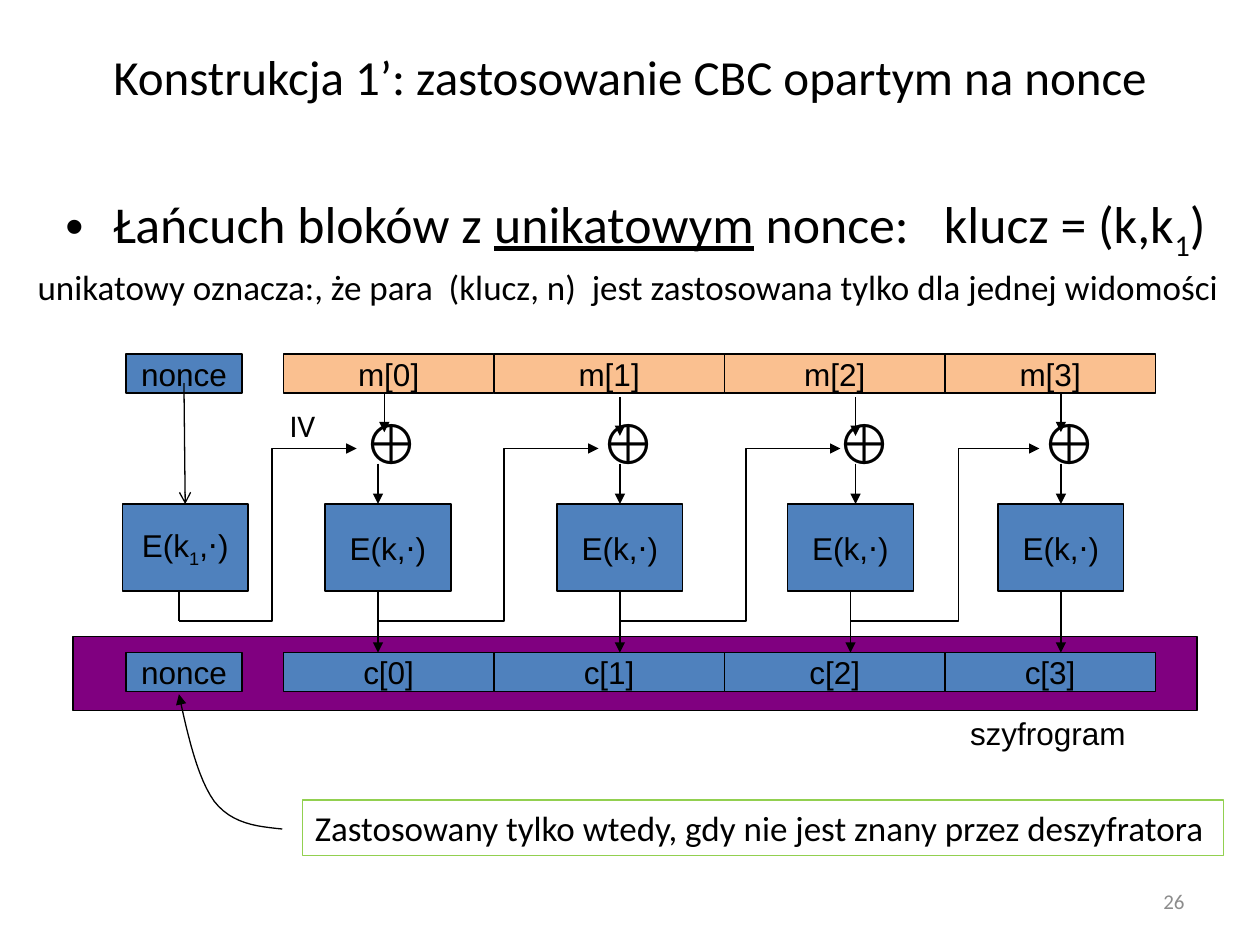
from dataclasses import dataclass

from lxml import etree
from pptx import Presentation
from pptx.dml.color import RGBColor
from pptx.enum.shapes import MSO_CONNECTOR, MSO_SHAPE
from pptx.enum.text import MSO_ANCHOR, MSO_AUTO_SIZE, PP_ALIGN
from pptx.oxml.ns import qn
from pptx.util import Inches, Pt

LEFT, CENTER, RIGHT = PP_ALIGN.LEFT, PP_ALIGN.CENTER, PP_ALIGN.RIGHT
TOP, MIDDLE = MSO_ANCHOR.TOP, MSO_ANCHOR.MIDDLE
FIT = MSO_AUTO_SIZE.SHAPE_TO_FIT_TEXT
RECT, STRAIGHT = MSO_SHAPE.RECTANGLE, MSO_CONNECTOR.STRAIGHT
SIDE_TOP, SIDE_BOTTOM = 0, 2


@dataclass(frozen=True)
class Theme:
    text: str = "000000"
    muted: str = "8C8C8C"
    line: str = "000000"
    block: str = "4F81BD"
    message: str = "FAC090"
    cipher: str = "800080"
    note: str = "92D050"
    head_font: str = "Calibri"
    diagram_font: str = "Arial"
    title: float = 28
    bullet: float = 29.6
    body: float = 20
    label: float = 18
    xor: float = 32
    number: float = 12
    stroke: float = 0.75


T = Theme()


def rgb(value):
    return RGBColor.from_string(value)


def write(sp, text, size=T.label, font=T.diagram_font, color=T.text, align=LEFT,
          anchor=TOP, wrap=False, fit=False):
    """Fill a shape with text: a string or a list of (string, style) runs."""
    tf = sp.text_frame
    tf.word_wrap, tf.vertical_anchor = wrap, anchor
    if fit:
        tf.auto_size = FIT
    p = tf.paragraphs[0]
    p.alignment = align
    for part, style in [(text, "")] if isinstance(text, str) else text:
        r = p.add_run()
        r.text = part
        r.font.size, r.font.name = Pt(size), font
        r.font.color.rgb = rgb(color)
        if style == "underline":
            r.font.underline = True
        elif style == "sub":
            r.font._element.set("baseline", "-25000")
    return p


def add_text(s, x, y, w, h, text, **fmt):
    sp = s.shapes.add_textbox(Inches(x), Inches(y), Inches(w), Inches(h))
    return write(sp, text, **fmt)


def add_box(s, x, y, w, h, text=None, fill=None, line=T.line, **fmt):
    sp = s.shapes.add_shape(RECT, Inches(x), Inches(y), Inches(w), Inches(h))
    sp.shadow.inherit = False
    if fill:
        sp.fill.solid()
        sp.fill.fore_color.rgb = rgb(fill)
    else:
        sp.fill.background()
    sp.line.color.rgb, sp.line.width = rgb(line), Pt(T.stroke)
    if text:
        write(sp, text, **{"align": CENTER, "anchor": MIDDLE, **fmt})
    return sp


def style_line(sp, head):
    sp.line.color.rgb, sp.line.width = rgb(T.line), Pt(T.stroke)
    if head:
        etree.SubElement(sp.line._get_or_add_ln(), qn("a:tailEnd"), type=head)


def add_line(s, x1, y1, x2, y2, head="triangle", start=None, end=None):
    c = s.shapes.add_connector(STRAIGHT, Inches(x1), Inches(y1), Inches(x2), Inches(y2))
    if start:
        c.begin_connect(start, SIDE_BOTTOM)
    if end:
        c.end_connect(end, SIDE_TOP)
    style_line(c, head)
    etree.SubElement(c._element.spPr, qn("a:effectLst"))


def add_path(s, points):
    (x, y), *rest = [(Inches(px), Inches(py)) for px, py in points]
    fb = s.shapes.build_freeform(x, y)
    fb.add_line_segments(rest, close=False)
    sp = fb.convert_to_shape()
    sp.shadow.inherit = False
    sp.fill.background()
    style_line(sp, "triangle")


def bezier(a, b, c, d, steps=12):
    """Points on a cubic curve, without its first point."""
    for i in range(1, steps + 1):
        t = i / steps
        u = 1 - t
        weights = (u ** 3, 3 * u * u * t, 3 * u * t * t, t ** 3)
        yield tuple(sum(k * q[axis] for k, q in zip(weights, (a, b, c, d)))
                    for axis in (0, 1))


def add_heading(s):
    add_text(s, 0.5, 0.3, 9, 0.61, "Konstrukcja 1’: zastosowanie CBC opartym na nonce",
             size=T.title, font=T.head_font, align=CENTER, anchor=MIDDLE, wrap=True)
    p = add_text(s, 0.42, 1.47, 9.58, 1,
                 [("Łańcuch bloków z ", ""), ("unikatowym", "underline"),
                  (" nonce:   klucz = (k,k", ""), ("1", "sub"), (")", "")],
                 size=T.bullet, font=T.head_font, wrap=True)
    p.space_before = Pt(6)
    pPr = p._p.get_or_add_pPr()
    pPr.set("marL", str(Inches(0.38)))
    pPr.set("indent", str(-Inches(0.38)))
    etree.SubElement(pPr, qn("a:buFont"), typeface="Arial")
    etree.SubElement(pPr, qn("a:buChar"), char="•")
    add_text(s, 0.2, 2.06, 9.8, 0.44,
             "unikatowy oznacza:, że para  (klucz, n)  jest zastosowana tylko dla jednej widomości",
             size=T.body, font=T.head_font, wrap=True, fit=True)


def add_chain(s):
    row_h, message_y, cipher_y = 0.31, 2.81, 5.18
    block_y, block_w, block_h = 4, 1, 0.69
    block_bottom, bus_y, xor_y = block_y + block_h, 4.93, 3.56

    # Ciphertext frame, then the message and ciphertext rows
    add_box(s, 0.58, 5.05, 8.92, 0.59, fill=T.cipher)
    edges = [2.25, 3.92, 5.75, 7.5, 9.17]
    for i, (x, right) in enumerate(zip(edges, edges[1:])):
        add_box(s, x, message_y, right - x, row_h, f"m[{i}]", fill=T.message)
        add_box(s, x, cipher_y, right - x, row_h, f"c[{i}]", fill=T.block)
    for y in (message_y, cipher_y):
        add_box(s, 1, y, 0.92, row_h, "nonce", fill=T.block)

    # Columns: block left, xor left, message arrow x and top, block arrow x, output x
    columns = [(2.58, 2.79, 3.05, 3.12, 3, 3),
               (4.42, 4.67, 4.92, 3.15, 4.92, 4.92),
               (6.25, 6.54, 6.79, 3.15, 6.79, 6.75),
               (7.92, 8.17, 8.42, 3.12, 8.42, 8.42)]
    for block_x, xor_x, m_x, m_y, in_x, out_x in columns:
        block = add_box(s, block_x, block_y, block_w, block_h, "E(k,⋅)", fill=T.block)
        middle = round(block_x + block_w / 2, 2)
        add_text(s, xor_x, 3.19, 0.55, 0.64, "⊕", size=T.xor, fit=True)
        add_line(s, m_x, m_y, m_x, m_y + 0.31)
        add_line(s, in_x, 3.68, in_x, block_y, end=block if in_x == middle else None)
        add_line(s, out_x, block_bottom, out_x, cipher_y,
                 start=block if out_x == middle else None)

    # Encrypted nonce, used as the first chaining value
    iv_block = add_box(s, 0.97, block_y, block_w, block_h,
                       [("E(k", ""), ("1", "sub"), (",⋅)", "")], fill=T.block)
    add_line(s, 1.46, 3.04, 1.47, block_y, head="arrow", end=iv_block)
    add_line(s, 1.42, block_bottom, 1.42, bus_y, head=None)
    add_text(s, 2.2, 3.17, 0.41, 0.4, "IV", font=T.head_font, fit=True)

    # Feedback from each output to the next xor
    for start, turn, end in [(1.42, 2.16, 2.83), (3, 4, 4.75),
                             (4.92, 5.92, 6.67), (6.75, 7.61, 8.25)]:
        add_path(s, [(start, bus_y), (turn, bus_y), (turn, xor_y), (end, xor_y)])


def add_notes_below(s):
    add_text(s, 7.6, 5.62, 1.45, 0.4, "szyfrogram", fit=True)
    add_box(s, 2.4, 6.35, 7.31, 0.44,
            "Zastosowany tylko wtedy, gdy nie jest znany przez deszyfratora",
            line=T.note, size=T.body, font=T.head_font, align=LEFT, anchor=TOP, fit=True)
    start, bend, tip = (2.24, 6.58), (1.7, 6.36), (1.42, 5.51)
    add_path(s, [start, *bezier(start, (2.04, 6.56), (1.84, 6.54), bend),
                 *bezier(bend, (1.57, 6.18), (1.49, 5.84), tip)])
    add_text(s, 7.17, 6.95, 2.33, 0.4, "26", size=T.number, font=T.head_font,
             color=T.muted, align=RIGHT, anchor=MIDDLE, wrap=True)


def main():
    prs = Presentation()
    prs.slide_width, prs.slide_height = Inches(10), Inches(7.5)
    s = prs.slides.add_slide(prs.slide_layouts[6])
    add_heading(s)
    add_chain(s)
    add_notes_below(s)
    prs.save("out.pptx")


if __name__ == "__main__":
    main()
